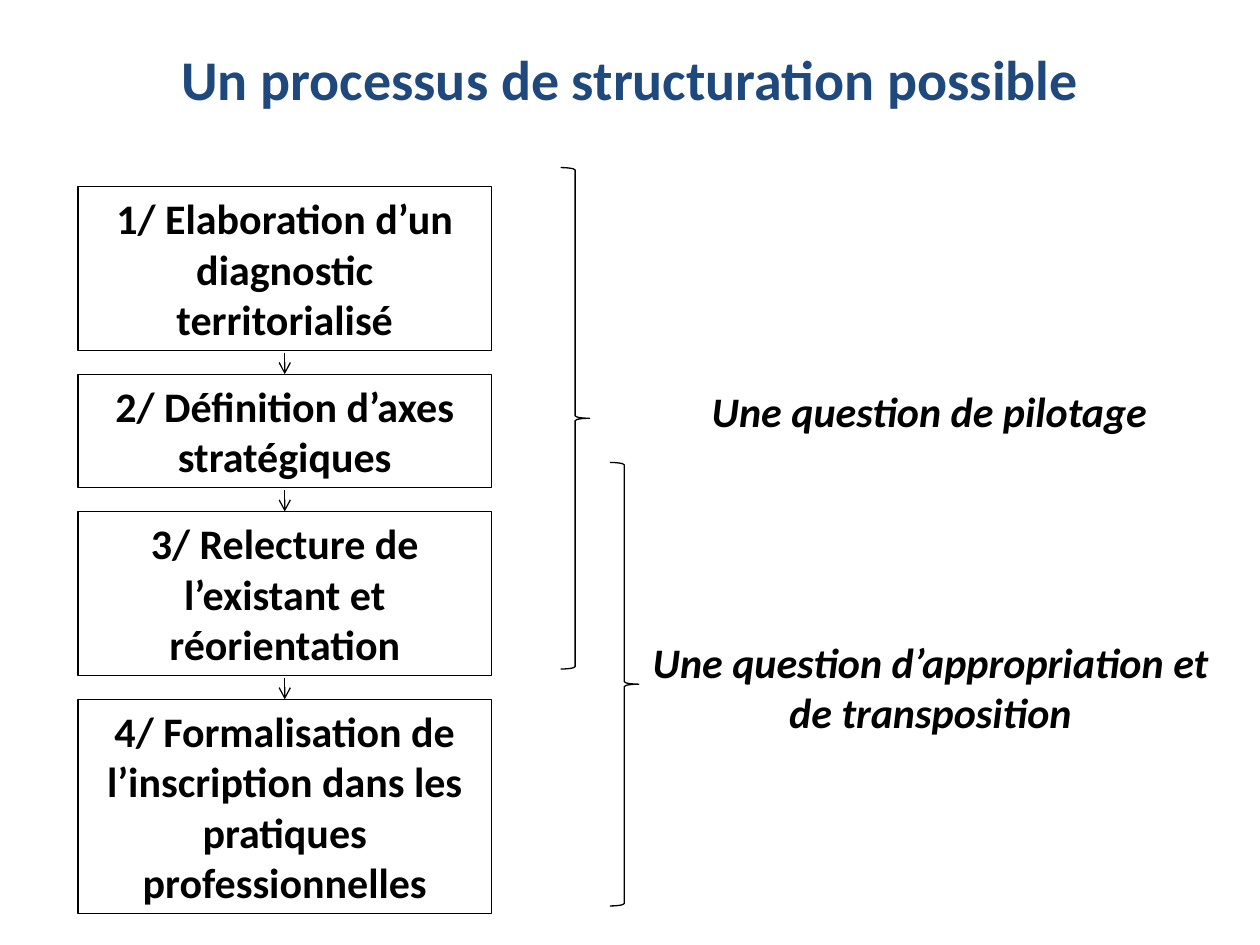
"""Build a slide that shows a four-step process with two braces."""
from lxml import etree
from pptx import Presentation
from pptx.dml.color import RGBColor
from pptx.enum import shapes, text
from pptx.oxml import ns
from pptx.util import Inches, Pt

NAVY = RGBColor(0x1F, 0x49, 0x7D)
BLACK = RGBColor(0, 0, 0)
LEFT, TOP, WIDTH, GAP = 0.62, 1.48, 3.28, 0.19
STEPS = [
    ("1/ Elaboration d’un diagnostic territorialisé", 1.3),
    ("2/ Définition d’axes stratégiques", 0.9),
    ("3/ Relecture de l’existant et réorientation", 1.3),
    ("4/ Formalisation de l’inscription dans les pratiques professionnelles", 1.7),
]
BRACES = [(4.45, 1.33, 0.23, 3.98), (4.84, 3.67, 0.23, 3.52)]


def write(shape, words, size=24, color=BLACK, italic=False, align=text.PP_ALIGN.CENTER):
    """Fill a shape with one bold paragraph."""
    frame = shape.text_frame
    frame.word_wrap = True
    frame.auto_size = text.MSO_AUTO_SIZE.NONE
    frame.vertical_anchor = text.MSO_ANCHOR.TOP
    para = frame.paragraphs[0]
    para.alignment = align
    run = para.add_run()
    run.text = words
    font = run.font
    font.name, font.size, font.bold, font.italic = "Calibri", Pt(size), True, italic
    font.color.rgb = color


def stroke(shape):
    """Give a shape or connector a thin black line."""
    shape.line.color.rgb = BLACK
    shape.line.width = Pt(0.75)


def outline(slide, kind, *box):
    """Add an unfilled preset shape."""
    shape = slide.shapes.add_shape(kind, *map(Inches, box))
    shape.shadow.inherit = False
    shape.fill.background()
    stroke(shape)
    return shape


def arrow(slide, x, top, end):
    """Add a vertical arrow that points down."""
    line = slide.shapes.add_connector(
        shapes.MSO_CONNECTOR.STRAIGHT, *map(Inches, (x, top, x, end)))
    stroke(line)
    etree.SubElement(line.line._get_or_add_ln(), ns.qn("a:tailEnd"), type="arrow")
    etree.SubElement(line._element.spPr, ns.qn("a:effectLst"))


def note(slide, words, *box, **style):
    """Add an italic remark."""
    shape = slide.shapes.add_textbox(*map(Inches, box))
    write(shape, words, italic=True, **style)


def head(slide, words):
    """Place and fill the title."""
    title = slide.shapes.title
    title.left, title.top, title.width, title.height = map(Inches, (0.5, 0.3, 9, 1.25))
    write(title, words, size=32, color=NAVY)


def steps(slide):
    """Stack the step boxes and join them with arrows."""
    top = TOP
    for i, (words, height) in enumerate(STEPS):
        if i:
            arrow(slide, LEFT + WIDTH / 2, top - GAP + 0.02, top)
        box = outline(slide, shapes.MSO_SHAPE.RECTANGLE, LEFT, top, WIDTH, height)
        write(box, words)
        top += height + GAP


def main():
    """Build and save the slide."""
    deck = Presentation()
    deck.slide_width, deck.slide_height = Inches(10), Inches(7.5)
    slide = deck.slides.add_slide(deck.slide_layouts[5])
    head(slide, "Un processus de structuration possible")
    steps(slide)
    for box in BRACES:
        outline(slide, shapes.MSO_SHAPE.RIGHT_BRACE, *box)
    note(slide, "Une question de pilotage", 5.55, 3.01, 4.22, 0.5,
         align=text.PP_ALIGN.LEFT)
    note(slide, "Une question d’appropriation et de transposition", 5.08, 5, 4.61, 0.9)
    deck.save("out.pptx")


if __name__ == "__main__":
    main()
